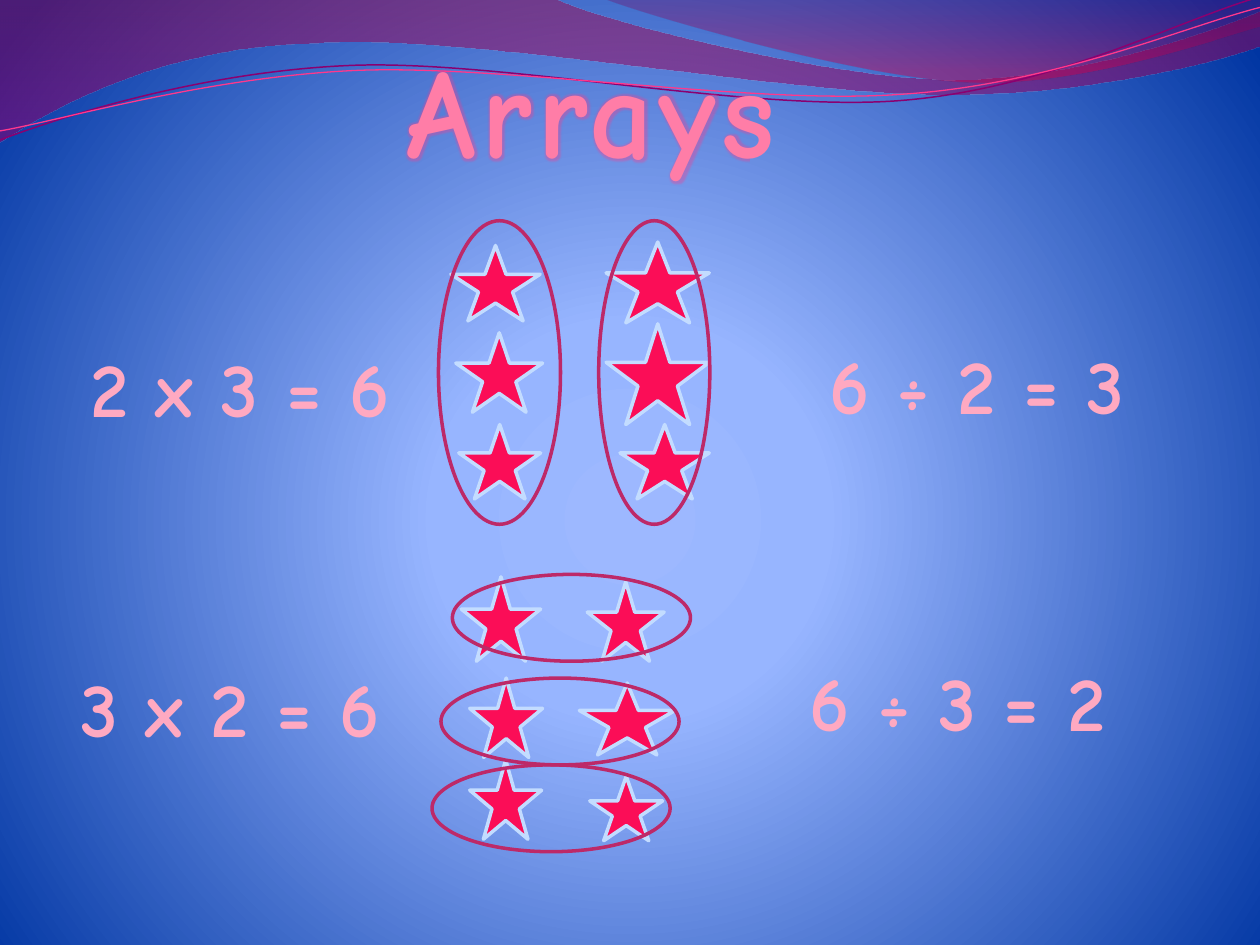
from math import cos, radians, sin

from lxml.etree import SubElement
from pptx import Presentation
from pptx.dml.color import RGBColor
from pptx.enum.shapes import MSO_SHAPE as Shape
from pptx.enum.text import MSO_ANCHOR as Anchor, MSO_AUTO_SIZE as AutoSize, PP_ALIGN as Align
from pptx.oxml import parse_xml
from pptx.oxml.ns import nsdecls, qn
from pptx.util import Cm, Pt

COLORS = {
    "sky_center": "9DB8FF", "sky_mid": "97B5FF", "sky_edge": "0035A2",
    "wave_red": "A90042", "wave_violet": "8E0073",
    "crest_violet": "73005E", "crest_red": "C9004F",
    "strand_dark": "8A0070", "strand_bright": "FF388C",
    "star": "FB0D57", "star_edge": "C3DCFF", "ring": "BD2968",
    "title_top": "FF7DA7", "title_bottom": "E10562", "title_edge": "FFF4F7", "title_glow": "FF388C",
    "sum_top": "FFA9C1", "sum_bottom": "BD2968", "sum_edge": "FFFCFC",
}

# Outlines in cm: two numbers draw a line, six draw a Bézier curve
WAVE = [
    (0, 0), (11.18, -0.03),
    (12.09, 0.43, 16.87, 1.6, 19.25, 1.6), (21.67, 1.6, 24.33, 0.66, 25.4, 0.23),
    (25.43, 0.91),
    (24.97, 1.12, 22.1, 1.93, 18.95, 1.9), (15.8, 1.9, 9.7, 0.71, 6.53, 0.86),
    (3.28, 0.91, 1.17, 2.11, -0.03, 2.87),
]
CREST = [
    (12.17, -0.03), (12.93, 0.28, 17.32, 1.57, 19.53, 1.65),
    (21.74, 1.75, 24.41, 0.81, 25.4, 0.53), (25.4, 0),
]
DARK_STRAND = [
    (0, 2.82), (1.22, 2.36, 4.01, 1.45, 7.04, 1.32),
    (10.03, 1.19, 15.06, 2.26, 18.11, 2.03), (21.16, 1.8, 23.83, 0.38, 25.35, -0.05),
]
BRIGHT_STRAND = [
    (0, 2.64), (1.19, 2.44, 4.17, 1.55, 7.19, 1.42),
    (10.24, 1.3, 15.16, 2.13, 18.21, 1.9), (21.23, 1.7, 23.9, 0.53, 25.4, 0.15),
]
STRAND_TILT = -2.7

# Left, top, width, height in cm
STARS = [
    (9.09, 4.95, 1.8, 1.52), (12.22, 4.88, 2.08, 1.63),
    (9.19, 6.71, 1.75, 1.6), (12.22, 6.53, 2.08, 2.03),
    (9.25, 8.56, 1.65, 1.5), (12.5, 8.56, 1.8, 1.5),
    (9.3, 11.63, 1.6, 1.7), (11.84, 11.73, 1.55, 1.6),
    (9.47, 13.67, 1.47, 1.6), (11.68, 13.77, 1.93, 1.45),
    (9.47, 15.32, 1.45, 1.6), (11.89, 15.65, 1.47, 1.3),
]
COLUMN_RINGS = [(8.84, 4.45, 2.46, 6.12), (12.07, 4.45, 2.24, 6.12)]
ROW_RINGS = [(left, top, 4.8, 1.75) for left, top in [(9.12, 11.58), (8.89, 13.67), (8.71, 15.42)]]
SUMS = [
    ("2 x 3 = 6", 0.84, 6.74), ("6 ÷ 2 = 3", 15.7, 6.68),
    ("3 x 2 = 6", 0.64, 13.19), ("6 ÷ 3 = 2", 15.31, 13.07),
]

FRAME_FORMAT = {
    "word_wrap": False, "auto_size": AutoSize.SHAPE_TO_FIT_TEXT, "vertical_anchor": Anchor.TOP,
}
TITLE_STYLE = {"font": {"size": Pt(72), "name": "Comic Neue", "bold": True},
               "stops": [("title_top", 10), ("title_bottom", 75)],
               "edge": ("title_edge", 0.9), "spacing": 3, "glow": "title_glow"}
SUM_STYLE = {"font": {"size": Pt(44), "name": "Comic Neue", "bold": True},
             "stops": [("sum_top", 10), ("sum_bottom", 90)],
             "edge": ("sum_edge", 1.4), "spacing": 0, "glow": None}


def rgb(name):
    return RGBColor.from_string(COLORS[name])


def apply(target, values):
    for attribute, value in values.items():
        setattr(target, attribute, value)


def fill_downward(fill, stops):
    fill.gradient()
    fill.gradient_angle = 270
    for stop, (color, percent) in zip(fill.gradient_stops, stops):
        stop.color.rgb = rgb(color)
        stop.position = percent / 100


def set_line(shape, color, width):
    shape.line.color.rgb = rgb(color)
    shape.line.width = Pt(width)


def paint_sky(slide):
    stops = "".join(
        f'<a:gs pos="{percent * 1000}"><a:srgbClr val="{COLORS[color]}"/></a:gs>'
        for color, percent in [("sky_center", 0), ("sky_mid", 25), ("sky_edge", 100)])
    radial = parse_xml(
        f'<a:gradFill {nsdecls("a")} rotWithShape="1"><a:gsLst>{stops}</a:gsLst><a:path path="circle">'
        '<a:fillToRect l="10000" t="110000" r="10000" b="100000"/></a:path></a:gradFill>')
    slide.background.fill.gradient()
    linear = next(slide.element.iter(qn("a:gradFill")))
    linear.getparent().replace(linear, radial)


def turn(outline, center, degrees):
    """Rotate every point of an outline about a center."""
    c, s = cos(radians(degrees)), sin(radians(degrees))
    turned = []
    for segment in outline:
        offsets = [(x - center[0], y - center[1]) for x, y in zip(segment[::2], segment[1::2])]
        turned.append(tuple(value for x, y in offsets
                            for value in (center[0] + x * c - y * s, center[1] + x * s + y * c)))
    return turned


def add_outline(slide, outline, close):
    points = [(Cm(x), Cm(y)) for segment in outline for x, y in zip(segment[::2], segment[1::2])]
    builder = slide.shapes.build_freeform(*points[0])
    builder.add_line_segments(points[1:], close=close)
    shape = builder.convert_to_shape()
    shape.shadow.inherit = False
    # Join each three points of a curve into one Bézier segment
    lines = iter(list(shape._element.iter(qn("a:lnTo"))))
    for segment in outline[1:]:
        first = next(lines)
        if len(segment) == 6:
            first.tag = qn("a:cubicBezTo")
            for _ in range(2):
                line = next(lines)
                first.append(line[0])
                line.getparent().remove(line)
    return shape


def add_wave(slide, outline, stops, opacities):
    wave = add_outline(slide, outline, True)
    fill_downward(wave.fill, stops)
    wave.line.fill.background()
    gradient = next(wave._element.iter(qn("a:gradFill")))
    for color, opacity in zip(gradient.iter(qn("a:srgbClr")), opacities):
        SubElement(color, qn("a:alpha"), val=str(opacity * 1000))


def add_strand(slide, outline, center, color, width):
    strand = add_outline(slide, turn(outline, center, -STRAND_TILT), False)
    strand.rotation = STRAND_TILT
    strand.fill.background()
    set_line(strand, color, width)


def add_figure(slide, kind, box, edge, fill=None):
    figure = slide.shapes.add_shape(kind, *map(Cm, box))
    figure.shadow.inherit = False
    set_line(figure, edge, 2)
    if fill:
        figure.fill.solid()
        figure.fill.fore_color.rgb = rgb(fill)
    else:
        figure.fill.background()


def add_lettering(slide, text, box, style):
    frame = slide.shapes.add_textbox(*map(Cm, box)).text_frame
    apply(frame, FRAME_FORMAT)
    paragraph = frame.paragraphs[0]
    paragraph.alignment = Align.CENTER
    run = paragraph.add_run()
    run.text = text
    apply(run.font, style["font"])
    fill_downward(run.font.fill, style["stops"])
    # Letter spacing, outline and glow
    color, width = style["edge"]
    properties = run._r.get_or_add_rPr()
    properties.set("spc", str(style["spacing"] * 100))
    properties.insert(0, parse_xml(
        f'<a:ln {nsdecls("a")} w="{Pt(width)}"><a:solidFill>'
        f'<a:srgbClr val="{COLORS[color]}"/></a:solidFill></a:ln>'))
    if style["glow"]:
        properties.find(qn("a:gradFill")).addnext(parse_xml(
            f'<a:effectLst {nsdecls("a")}><a:glow rad="{Pt(3.6)}"><a:srgbClr val="{COLORS[style["glow"]]}">'
            '<a:alpha val="35000"/></a:srgbClr></a:glow></a:effectLst>'))


def main():
    deck = Presentation()
    deck.slide_width, deck.slide_height = Cm(25.4), Cm(19.05)
    slide = deck.slides.add_slide(deck.slide_layouts[6])

    # Sky and waves
    paint_sky(slide)
    add_wave(slide, WAVE, [("wave_red", 0), ("wave_violet", 100)], (45, 55))
    add_wave(slide, CREST, [("crest_violet", 0), ("crest_red", 80)], (30, 45))
    add_strand(slide, DARK_STRAND, (12.67, 1.46), "strand_dark", 0.85)
    add_strand(slide, BRIGHT_STRAND, (12.69, 1.5), "strand_bright", 0.75)

    # Arrays of stars, title, and rings around the groups
    for box in STARS:
        add_figure(slide, Shape.STAR_5_POINT, box, "star_edge", "star")
    add_lettering(slide, "Arrays", (7.13, 0.53, 9.58, 3.33), TITLE_STYLE)
    for box in COLUMN_RINGS + ROW_RINGS:
        add_figure(slide, Shape.OVAL, box, "ring")

    # Multiplication and division sums
    for text, left, top in SUMS:
        add_lettering(slide, text, (left, top, 8, 2.13), SUM_STYLE)

    deck.save("out.pptx")


if __name__ == "__main__":
    main()
